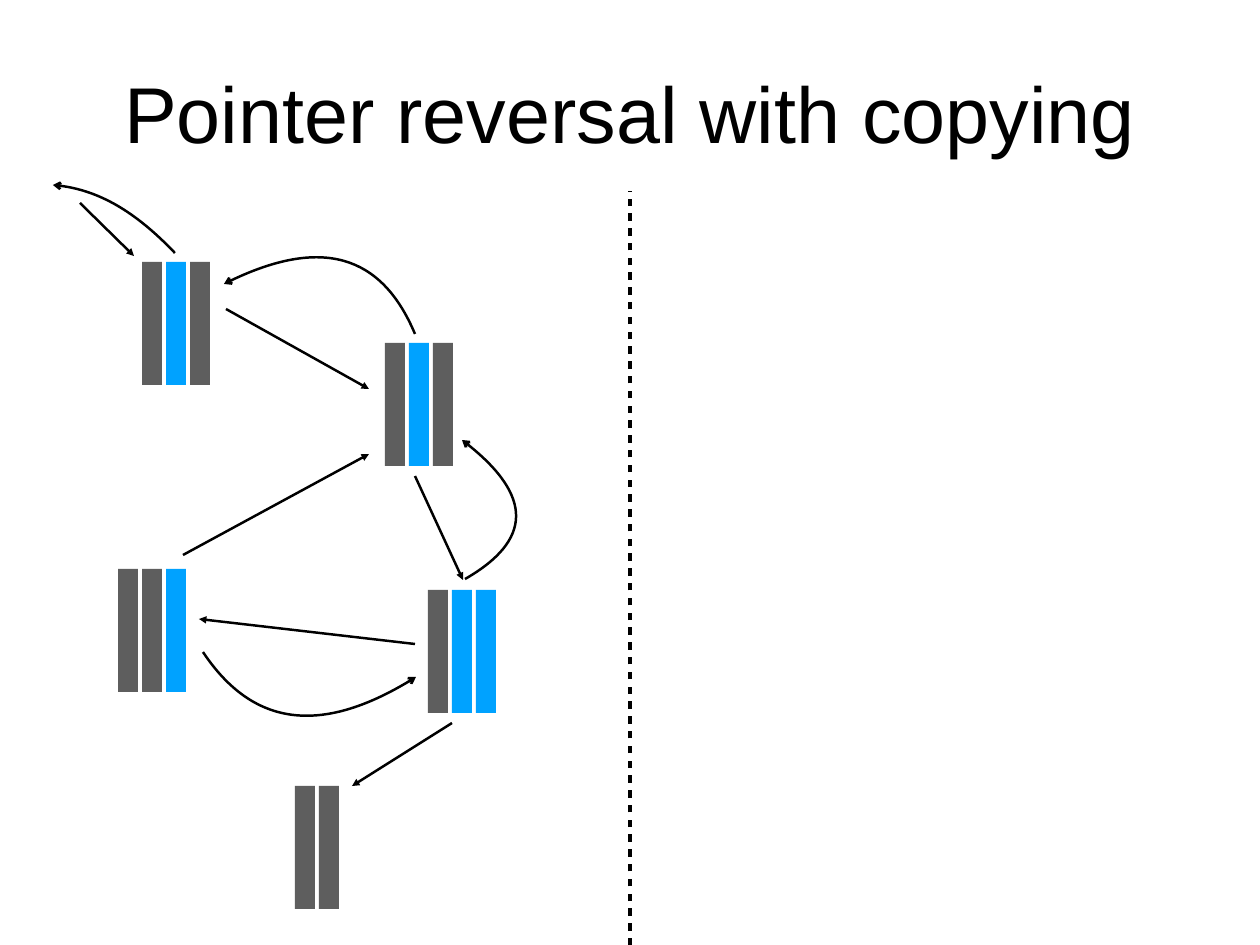
"""Builds a slide showing pointer reversal with copying on a linked structure."""
from lxml import etree
from pptx import Presentation, util as u
from pptx.dml.color import RGBColor
from pptx.enum import shapes, text
from pptx.oxml import ns

TITLE = "Pointer reversal with copying"
COLOURS = {"ink": "000000", "plain": "5E5E5E", "marked": "00A2FF"}
CELLS = [
    (142, 262, ("plain", "marked", "plain")),
    (385, 343, ("plain", "marked", "plain")),
    (428, 590, ("plain", "marked", "marked")),
    (118, 569, ("plain", "plain", "marked")),
    (295, 786, ("plain", "plain")),
]
POINTERS = [
    ((80, 203), (134, 256)),
    ((226, 309), (369, 389)),
    ((415, 476), (463, 580)),
    ((415, 644), (199, 619)),
    ((452, 723), (352, 786)),
    ((183, 555), (369, 454)),
]
REVERSED = [
    ((415, 334), (381, 253), (317, 237), (224, 284)),
    ((465, 579), (533, 540), (532, 493), (462, 440)),
    ((203, 652), (253, 727), (324, 735), (416, 677)),
    ((175, 253), (135, 211), (94, 188), (53, 185)),
]
DIVIDER = ((630, 975), (630, 191))
BAR_WIDTH, BAR_HEIGHT, BAR_STEP = 20, 123, 24
CURVE_STEPS = 20
PX = 914400 / 88.6


def px(length):
    return u.Emu(round(length * PX))


def colour(name):
    return RGBColor.from_string(COLOURS[name])


def add_child(parent, tag, **attributes):
    return etree.SubElement(parent, ns.qn(tag), attributes)


def style_line(shape, width, head=None):
    shape.line.color.rgb = colour("ink")
    shape.line.width = u.Pt(width)
    if head:
        add_child(shape.line._get_or_add_ln(), "a:tailEnd", type=head)


def add_title(page):
    box = page.shapes.add_textbox(px(92), px(25), px(1076), px(174))
    frame = box.text_frame
    frame.word_wrap = True
    frame.vertical_anchor = text.MSO_ANCHOR.MIDDLE
    frame.margin_left = frame.margin_right = px(5)
    frame.margin_top = frame.margin_bottom = px(5)
    para = frame.paragraphs[0]
    para.alignment = text.PP_ALIGN.CENTER
    span = para.add_run()
    span.text = TITLE
    span.font.name = "Arial"
    span.font.size = u.Pt(64.3)
    span.font.color.rgb = colour("ink")


def add_cell(page, left, top, fills):
    for index, fill in enumerate(fills):
        bar = page.shapes.add_shape(
            shapes.MSO_SHAPE.RECTANGLE, px(left + index * BAR_STEP), px(top),
            px(BAR_WIDTH), px(BAR_HEIGHT))
        bar.shadow.inherit = False
        bar.fill.solid()
        bar.fill.fore_color.rgb = colour(fill)
        bar.line.fill.background()


def add_straight(page, start, end, width, head=None):
    line = page.shapes.add_connector(
        shapes.MSO_CONNECTOR.STRAIGHT, *map(px, start + end))
    style_line(line, width, head)
    add_child(line._element.spPr, "a:effectLst")
    return line


def curve_point(controls, t):
    weights = ((1 - t) ** 3, 3 * t * (1 - t) ** 2, 3 * t * t * (1 - t), t ** 3)
    return tuple(px(sum(w * c for w, c in zip(weights, axis)))
                 for axis in zip(*controls))


def add_curve(page, controls):
    points = [curve_point(controls, i / CURVE_STEPS) for i in range(CURVE_STEPS + 1)]
    builder = page.shapes.build_freeform(*points[0])
    builder.add_line_segments(points[1:], close=False)
    curve = builder.convert_to_shape()
    outline = curve._element.find(".//" + ns.qn("a:path"))
    for segment in outline.findall(ns.qn("a:lnTo")):
        outline.remove(segment)
    bezier = add_child(outline, "a:cubicBezTo")
    for x, y in controls[1:]:
        add_child(bezier, "a:pt", x=str(px(x) - curve.left), y=str(px(y) - curve.top))
    curve.shadow.inherit = False
    curve.fill.background()
    style_line(curve, 2, "arrow")


def main():
    deck = Presentation()
    deck.slide_width, deck.slide_height = px(1260), px(945)
    page = deck.slides.add_slide(deck.slide_layouts[6])
    add_title(page)
    for cell in CELLS:
        add_cell(page, *cell)
    divider = add_straight(page, *DIVIDER, 3)
    dashes = add_child(divider.line._get_or_add_ln(), "a:custDash")
    add_child(dashes, "a:ds", d="200000", sp="200000")
    for start, end in POINTERS:
        add_straight(page, start, end, 2, "triangle")
    for controls in REVERSED:
        add_curve(page, controls)
    deck.save("out.pptx")


if __name__ == "__main__":
    main()
